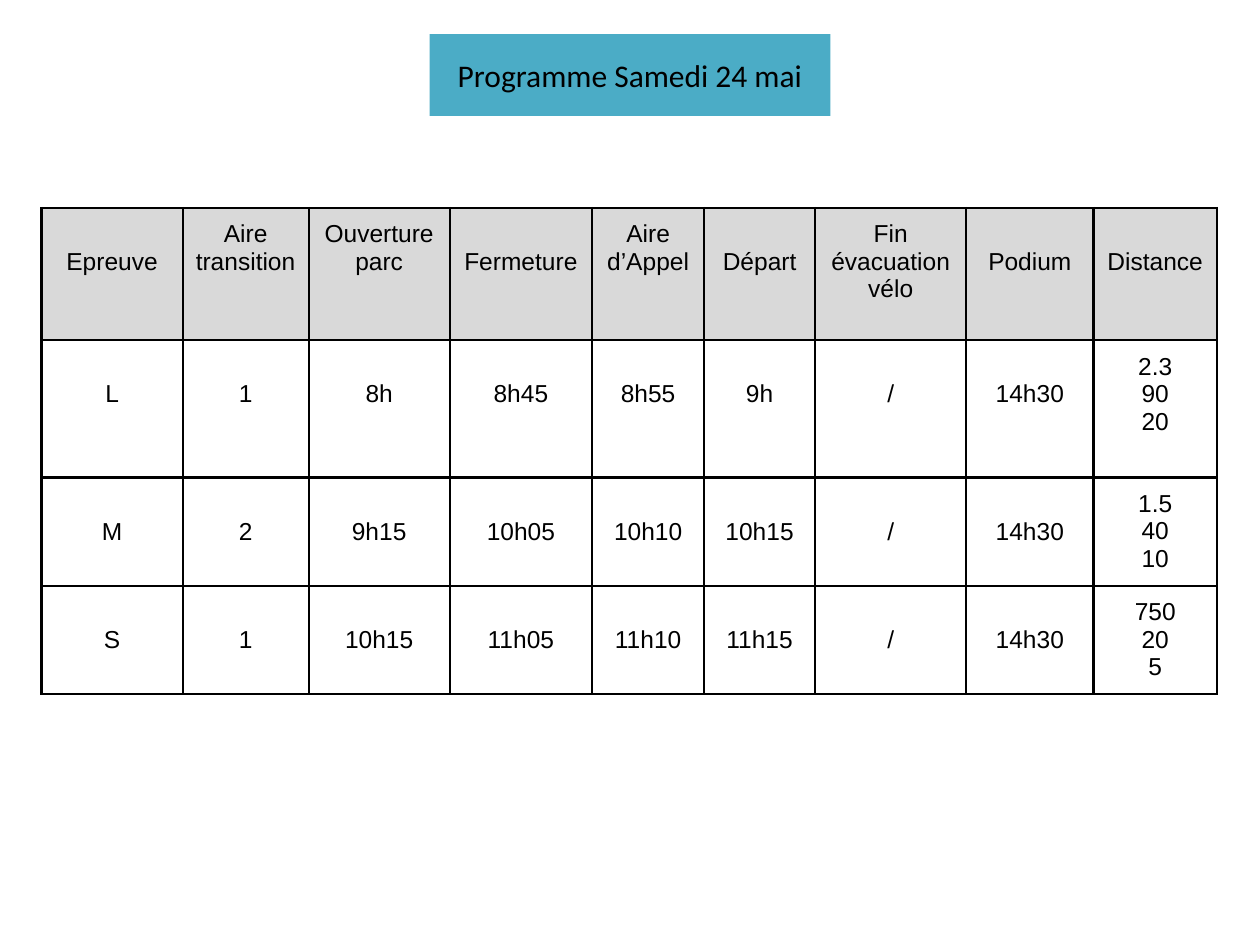
from dataclasses import dataclass

from lxml import etree
from pptx import Presentation
from pptx import util as u
from pptx.dml.color import RGBColor
from pptx.enum import shapes, text
from pptx.oxml import ns


@dataclass(frozen=True)
class Theme:
    title_font: str = "Calibri"
    table_font: str = "Arial"
    title_size: int = 18
    table_size: int = 14
    border_width: float = 1.5
    ink: str = "000000"
    banner: str = "4BACC6"
    header: str = "D9D9D9"


@dataclass(frozen=True)
class Race:
    name: str
    area: str
    opening: str
    closing: str
    call: str
    start: str
    distances: str
    evacuation: str = "/"
    podium: str = "14h30"

    def cells(self) -> list[str]:
        return [self.name, self.area, self.opening, self.closing, self.call,
                self.start, self.evacuation, self.podium, self.distances]


THEME = Theme()
MARGIN = 0.1
LINE = 0.22  # height of one line of table text

HEADERS = {  # label: column width
    "Epreuve": 1.12, "Aire transition": 1, "Ouverture parc": 1.12,
    "Fermeture": 1.13, "Aire d’Appel": 0.89, "Départ": 0.88,
    "Fin évacuation vélo": 1.2, "Podium": 1.01, "Distance": 0.98,
}
RACES = [
    Race("L", "1", "8h", "8h45", "8h55", "9h", "2.3\n90\n20"),
    Race("M", "2", "9h15", "10h05", "10h10", "10h15", "1.5\n40\n10"),
    Race("S", "1", "10h15", "11h05", "11h10", "11h15", "750\n20\n5"),
]
ROW_HEIGHTS = [1.05, 1.09, 0.86, 0.86]


def write(tf, content: str, *, font: str, size: int, color: str = THEME.ink) -> None:
    """Write centred text, one paragraph per line."""
    tf.word_wrap = True
    for i, line in enumerate(content.split("\n")):
        p = tf.add_paragraph() if i else tf.paragraphs[0]
        p.alignment = text.PP_ALIGN.CENTER
        r = p.add_run()
        r.text = line
        r.font.name = font
        r.font.size = u.Pt(size)
        r.font.color.rgb = RGBColor.from_string(color)


def add_borders(cell) -> None:
    tc_pr = cell._tc.get_or_add_tcPr()
    for side in ("lnL", "lnR", "lnT", "lnB"):
        ln = etree.SubElement(tc_pr, ns.qn(f"a:{side}"), w=str(u.Pt(THEME.border_width)))
        fill = etree.SubElement(ln, ns.qn("a:solidFill"))
        etree.SubElement(fill, ns.qn("a:srgbClr"), val=THEME.ink)


def fill_cell(cell, content: str, *, header: bool) -> None:
    # Short entries sit one line lower, level with the middle of three lines
    one_line = " " not in content and "\n" not in content
    cell.margin_left = cell.margin_right = cell.margin_bottom = u.Inches(MARGIN)
    cell.margin_top = u.Inches(MARGIN + LINE * one_line)
    add_borders(cell)
    if header:
        cell.fill.solid()
        cell.fill.fore_color.rgb = RGBColor.from_string(THEME.header)
    else:
        cell.fill.background()
    write(cell.text_frame, content, font=THEME.table_font, size=THEME.table_size)


def add_title(s, content: str) -> None:
    sp = s.shapes.add_shape(shapes.MSO_SHAPE.RECTANGLE, u.Inches(3.41), u.Inches(0.27),
                            u.Inches(3.18), u.Inches(0.65))
    sp.shadow.inherit = False
    sp.fill.solid()
    sp.fill.fore_color.rgb = RGBColor.from_string(THEME.banner)
    sp.line.fill.background()
    sp.text_frame.vertical_anchor = text.MSO_ANCHOR.MIDDLE
    write(sp.text_frame, content, font=THEME.title_font, size=THEME.title_size)


def add_schedule(s) -> None:
    rows = [list(HEADERS)] + [race.cells() for race in RACES]
    table = s.shapes.add_table(len(rows), len(HEADERS), u.Inches(0.33), u.Inches(1.65),
                               u.Inches(sum(HEADERS.values())),
                               u.Inches(sum(ROW_HEIGHTS))).table
    table.first_row = table.horz_banding = False
    for column, width in zip(table.columns, HEADERS.values()):
        column.width = u.Inches(width)
    for i, (row, height) in enumerate(zip(rows, ROW_HEIGHTS)):
        table.rows[i].height = u.Inches(height)
        for j, content in enumerate(row):
            fill_cell(table.cell(i, j), content, header=i == 0)


def main() -> None:
    prs = Presentation()
    prs.slide_width, prs.slide_height = u.Inches(10), u.Inches(7.5)
    s = prs.slides.add_slide(prs.slide_layouts[6])

    # Banner above the timetable
    add_title(s, "Programme Samedi 24 mai")

    # Timetable of the races
    add_schedule(s)

    prs.save("out.pptx")


if __name__ == "__main__":
    main()
